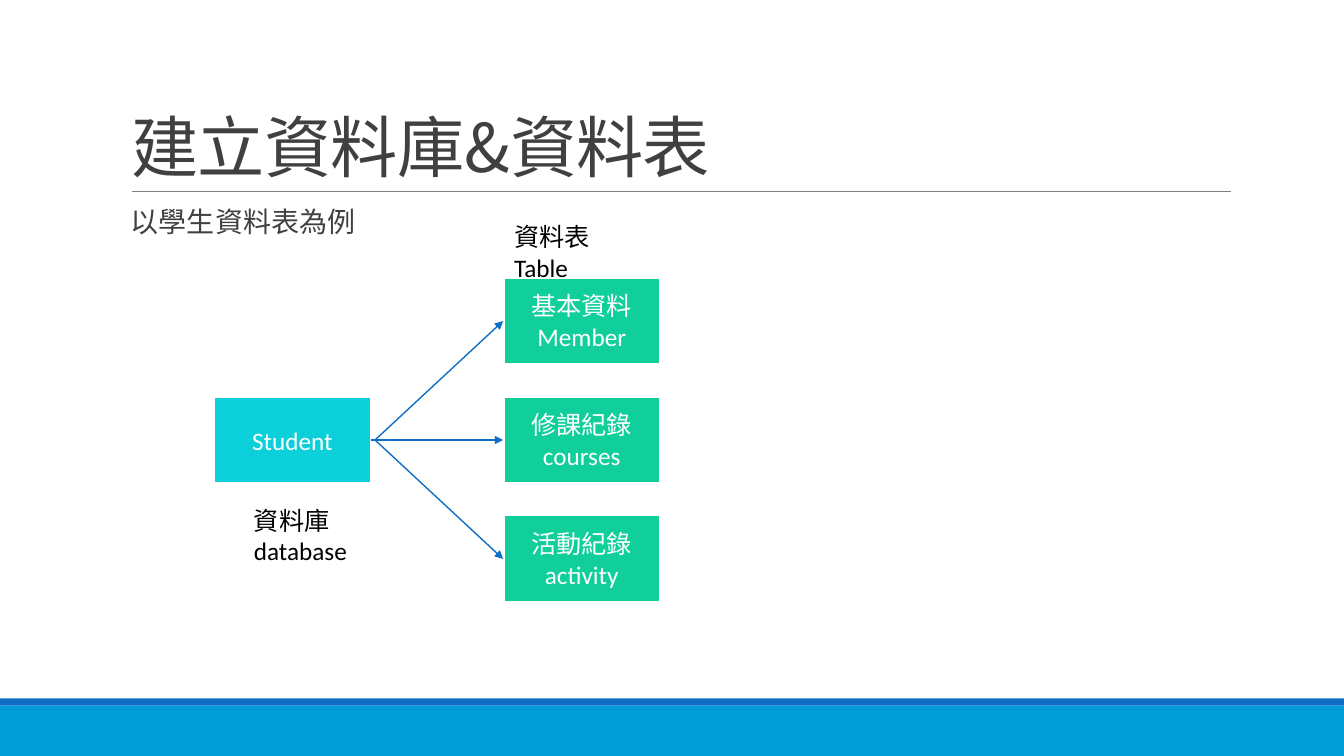
from lxml.etree import SubElement
from pptx import Presentation
from pptx.dml.color import RGBColor
from pptx.enum.shapes import MSO_CONNECTOR as Connector, MSO_SHAPE as Shape
from pptx.enum.text import MSO_ANCHOR as Anchor, MSO_AUTO_SIZE as AutoSize, PP_ALIGN as Align
from pptx.oxml.ns import qn
from pptx.util import Inches, Pt

COLORS = {
    "footer": "009DD9", "blue": "0F6FC6", "rule": "808080", "heading": "404040",
    "database": "0BD0D9", "table": "10CF9B", "white": "FFFFFF", "black": "000000",
}
LATIN, CJK = "Calibri", "Noto Sans CJK SC"
LEFT, RIGHT = 1, 3  # connection sites of a rectangle


def color(name):
    return RGBColor.from_string(COLORS[name])


class SlideBuilder:
    def __init__(self, slide):
        self.slide = slide

    def add_lines(self, frame, lines, size=18, ink="black", font=LATIN,
                  align=Align.LEFT, spacing=1.0, tracking=None):
        for index, line in enumerate(lines):
            paragraph = frame.paragraphs[0] if index == 0 else frame.add_paragraph()
            paragraph.alignment = align
            paragraph.line_spacing = spacing
            run = paragraph.add_run()
            run.text = line
            run.font.size = Pt(size)
            run.font.name = font
            run.font.color.rgb = color(ink)
            properties = run._r.get_or_add_rPr()
            SubElement(properties, qn("a:ea"), typeface=CJK)
            if tracking is not None:
                properties.set("spc", str(tracking))

    def title(self, text, x, y, w, h):
        title = self.slide.shapes.title
        title.left, title.top, title.width, title.height = map(Inches, (x, y, w, h))
        frame = title.text_frame
        frame.auto_size = AutoSize.NONE
        frame.vertical_anchor = Anchor.BOTTOM
        self.add_lines(frame, [text], 48, "heading", CJK, spacing=0.85, tracking=-50)

    def text(self, lines, x, y, w, h, **style):
        box = self.slide.shapes.add_textbox(*map(Inches, (x, y, w, h)))
        box.text_frame.word_wrap = True
        self.add_lines(box.text_frame, lines, **style)

    def rectangle(self, fill, x, y, w, h, lines=()):
        """Add a filled rectangle; one with text gets a white outline."""
        box = self.slide.shapes.add_shape(Shape.RECTANGLE, *map(Inches, (x, y, w, h)))
        box.shadow.inherit = False
        box.fill.solid()
        box.fill.fore_color.rgb = color(fill)
        if lines:
            box.line.color.rgb = color("white")
            box.line.width = Pt(2)
            box.text_frame.vertical_anchor = Anchor.MIDDLE
            self.add_lines(box.text_frame, lines, ink="white", align=Align.CENTER)
        else:
            box.line.fill.background()
        return box

    def line(self, x1, y1, x2, y2, ink, width):
        line = self.slide.shapes.add_connector(
            Connector.STRAIGHT, *map(Inches, (x1, y1, x2, y2)))
        line.line.color.rgb = color(ink)
        line.line.width = Pt(width)
        SubElement(line._element.spPr, qn("a:effectLst"))
        return line

    def arrow(self, x1, y1, x2, y2):
        arrow = self.line(x1, y1, x2, y2, "blue", 1)
        SubElement(arrow.get_or_add_ln(), qn("a:tailEnd"), type="triangle")
        return arrow


def main():
    deck = Presentation()
    deck.slide_width, deck.slide_height = Inches(13.33), Inches(7.5)
    page = SlideBuilder(deck.slides.add_slide(deck.slide_layouts[5]))

    page.rectangle("footer", 0, 7, 13.33, 0.5)
    page.rectangle("blue", 0, 6.93, 13.33, 0.07)
    page.line(1.31, 1.9, 12.21, 1.9, "rule", 0.5)
    page.title("建立資料庫&資料表", 1.2, 0.31, 11, 1.59)
    page.text(["以學生資料表為例"], 1.2, 2.02, 11, 4.4,
              size=20, ink="heading", font=CJK, spacing=0.9)

    box_w, box_h = 1.56, 0.87
    database_x, table_x, middle_y, pitch = 2.12, 4.99, 3.93, 1.18
    center_y = middle_y + box_h / 2
    database = page.rectangle("database", database_x, middle_y, box_w, box_h, ["Student"])

    tables = [["基本資料", "Member"], ["修課紀錄", "courses"], ["活動紀錄activity"]]
    for step, lines in enumerate(tables, start=-1):
        offset = step * pitch
        table = page.rectangle("table", table_x, middle_y + offset, box_w, box_h, lines)
        start_x = 3.72 if step else database_x + box_w
        arrow = page.arrow(start_x, center_y, table_x, center_y + offset)
        if step == 0:
            arrow.begin_connect(database, RIGHT)
        arrow.end_connect(table, LEFT)

    page.text(["資料庫", "database"], 2.42, 4.96, 1.3, 0.71)
    page.text(["資料表 Table"], 5, 2.15, 1.4, 0.4)

    deck.save("out.pptx")


if __name__ == "__main__":
    main()
